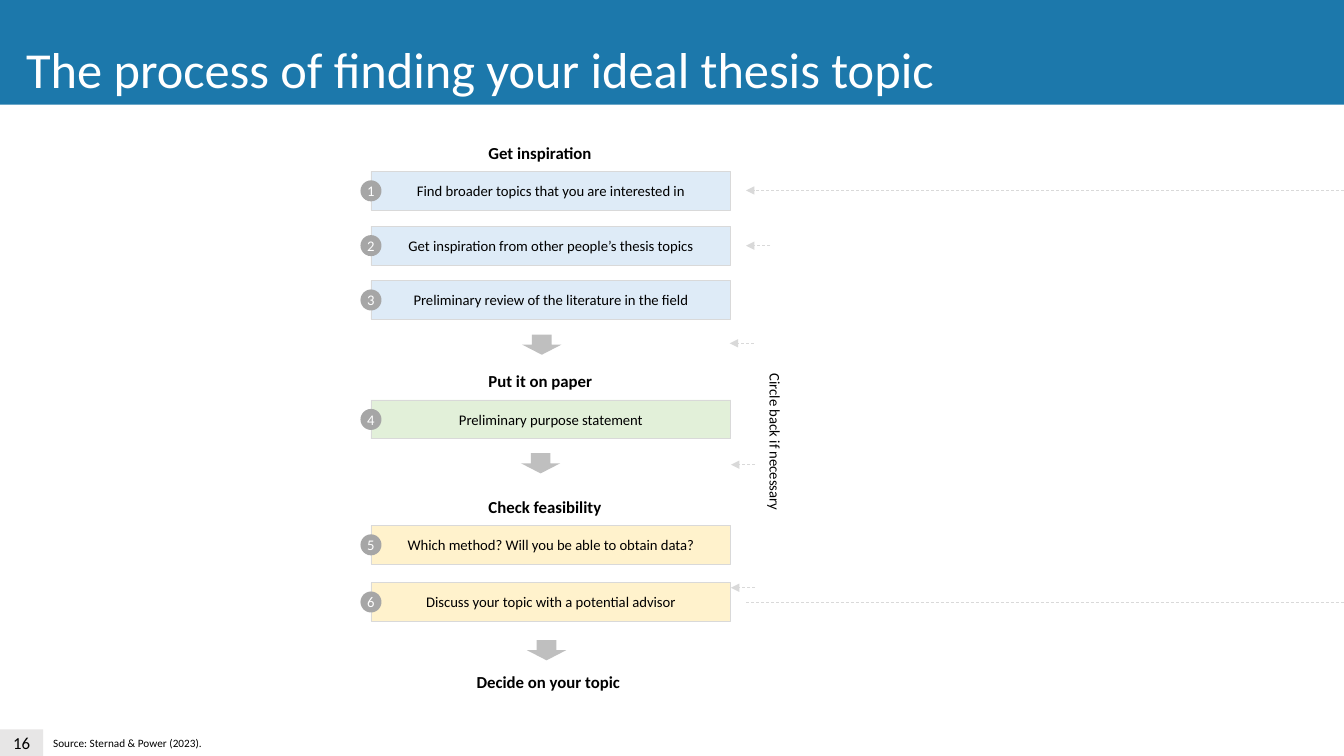
from dataclasses import dataclass

from lxml import etree
from pptx import Presentation
from pptx.dml.color import RGBColor
from pptx.enum.dml import MSO_LINE
from pptx.enum.shapes import MSO_CONNECTOR, MSO_SHAPE
from pptx.enum.text import MSO_ANCHOR, PP_ALIGN
from pptx.oxml.ns import qn
from pptx.util import Cm, Pt

RECT, OVAL, DOWN = MSO_SHAPE.RECTANGLE, MSO_SHAPE.OVAL, MSO_SHAPE.DOWN_ARROW
STRAIGHT, DASH = MSO_CONNECTOR.STRAIGHT, MSO_LINE.DASH
CENTER, MIDDLE = PP_ALIGN.CENTER, MSO_ANCHOR.MIDDLE


@dataclass(frozen=True)
class Theme:
    font: str = "Calibri"
    title: float = 36
    heading: float = 12
    body: float = 10.5
    source: float = 8
    text: str = "000000"
    white: str = "FFFFFF"
    band: str = "1C78AB"
    page: str = "E7E6E6"
    badge: str = "A6A6A6"
    arrow: str = "BFBFBF"
    line: str = "D9D9D9"
    inspiration: str = "DEEBF7"
    paper: str = "E2F0D9"
    feasibility: str = "FFF2CC"


class SlideBuilder:
    def __init__(self, slide, theme):
        self.s, self.t = slide, theme

    def style(self, p, text, size, color, bold=False):
        p.text = text
        p.font.name, p.font.size, p.font.bold = self.t.font, Pt(size), bold
        p.font.color.rgb = RGBColor.from_string(color)

    def shape(self, kind, x, y, w, h, fill, text="", size=None, color=None, border=False):
        sp = self.s.shapes.add_shape(kind, Cm(x), Cm(y), Cm(w), Cm(h))
        sp.shadow.inherit = False
        sp.fill.solid()
        sp.fill.fore_color.rgb = RGBColor.from_string(fill)
        if border:
            sp.line.color.rgb = RGBColor.from_string(self.t.line)
            sp.line.width = Pt(0.5)
        else:
            sp.line.fill.background()
        if text:
            tf = sp.text_frame
            tf.margin_left = tf.margin_right = tf.margin_top = tf.margin_bottom = 0
            tf.vertical_anchor = MIDDLE
            p = tf.paragraphs[0]
            p.alignment = CENTER
            self.style(p, text, size, color or self.t.text)

    def label(self, text, x, y, w, h, size, color=None, bold=False, rotation=0):
        sp = self.s.shapes.add_textbox(Cm(x), Cm(y), Cm(w), Cm(h))
        sp.rotation = rotation
        sp.text_frame.word_wrap = False
        self.style(sp.text_frame.paragraphs[0], text, size, color or self.t.text, bold)

    def step(self, number, text, y, fill):
        x, w, h, d = 9.35, 9.07, 0.98, 0.53
        self.shape(RECT, x, y, w, h, fill, text, self.t.body, border=True)
        self.shape(OVAL, x - d / 2, y + (h - d) / 2, d, d, self.t.badge,
                   str(number), self.t.body, self.t.white)

    def dashed(self, x1, x2, y, head=True):
        c = self.s.shapes.add_connector(STRAIGHT, Cm(x1), Cm(y), Cm(x2), Cm(y))
        c.line.color.rgb = RGBColor.from_string(self.t.line)
        c.line.width, c.line.dash_style = Pt(0.5), DASH
        props = c._element.spPr
        if head:
            etree.SubElement(props.find(qn("a:ln")), qn("a:tailEnd"), type="triangle")
        etree.SubElement(props, qn("a:effectLst"))


def main():
    prs = Presentation()
    prs.slide_width, prs.slide_height = Cm(33.87), Cm(19.05)
    t = Theme()
    b = SlideBuilder(prs.slides.add_slide(prs.slide_layouts[6]), t)

    # Title band
    b.shape(RECT, 0, 0, 33.87, 2.64, t.band)
    b.label("The process of finding your ideal thesis topic",
            0.41, 0.84, 23.62, 1.8, t.title, t.white)

    # Stage headings
    for text, x, y, w in [
        ("Get inspiration", 12.06, 3.48, 3.15),
        ("Put it on paper", 12.06, 9.22, 3.18),
        ("Check feasibility", 12.06, 12.38, 3.38),
        ("Decide on your topic", 11.76, 16.79, 4.19),
    ]:
        b.label(text, x, y, w, 0.76, t.heading, bold=True)

    # Numbered steps
    steps = [
        ("Find broader topics that you are interested in", 4.32, t.inspiration),
        ("Get inspiration from other people’s thesis topics", 5.7, t.inspiration),
        ("Preliminary review of the literature in the field", 7.07, t.inspiration),
        ("Preliminary purpose statement", 10.08, t.paper),
        ("Which method? Will you be able to obtain data?", 13.24, t.feasibility),
        ("Discuss your topic with a potential advisor", 14.68, t.feasibility),
    ]
    for number, (text, y, fill) in enumerate(steps, 1):
        b.step(number, text, y, fill)

    # Arrows between stages
    for x, y in [(13.16, 8.43), (13.13, 11.42), (13.28, 16.13)]:
        b.shape(DOWN, x, y, 0.99, 0.51, t.arrow)

    # Feedback loop: long return lines, then short arrows
    b.dashed(18.8, 33.87, 15.17, head=False)
    b.dashed(33.87, 18.8, 4.8)
    for x, y in [(18.8, 6.19), (18.39, 8.65), (18.42, 11.71), (18.42, 14.81)]:
        b.dashed(x + 0.61, x, y)
    b.label("Circle back if necessary", 17.53, 10.82, 4.01, 0.71, t.body, rotation=90)

    # Footer
    b.shape(RECT, 0, 18.38, 1.09, 0.67, t.page, "16", t.heading)
    b.label("Source: Sternad & Power (2023).", 1.09, 18.44, 4.29, 0.61, t.source)

    prs.save("out.pptx")


if __name__ == "__main__":
    main()
